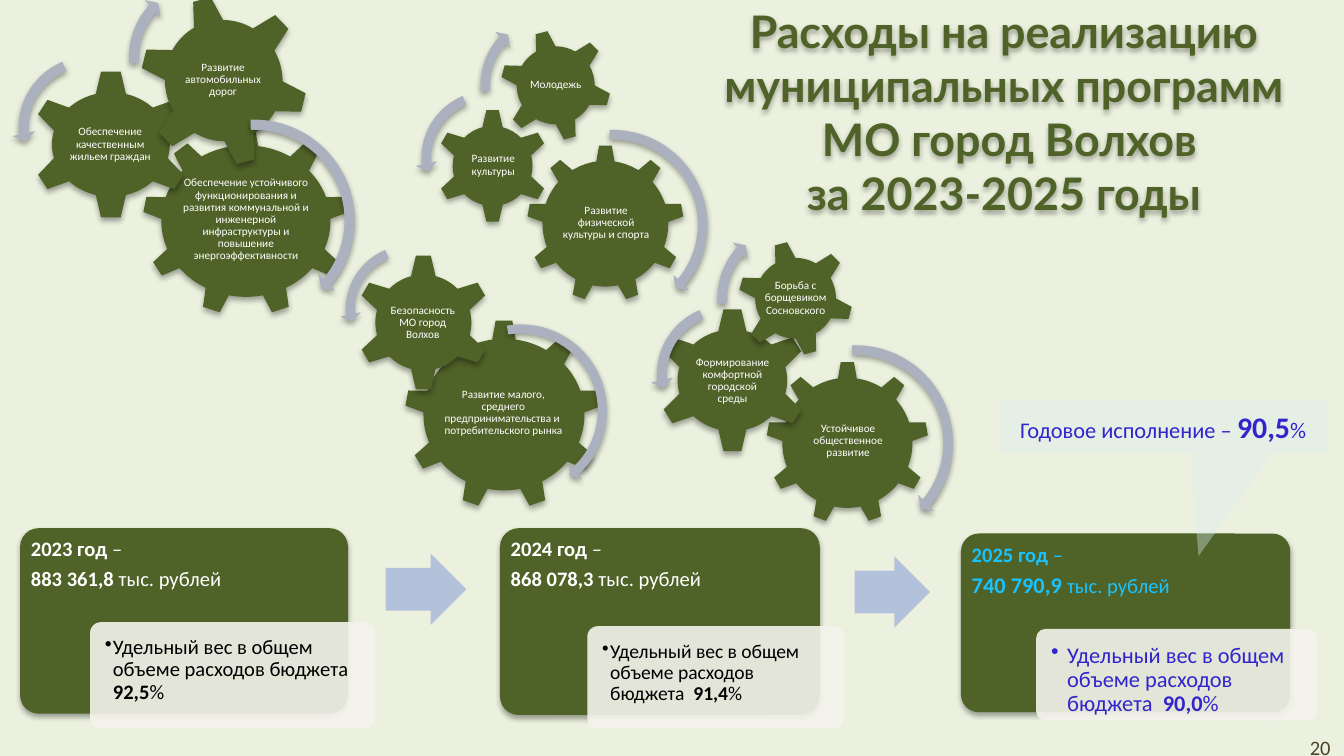
from dataclasses import dataclass
from typing import NamedTuple

from lxml import etree
from pptx import Presentation
from pptx.dml.color import RGBColor
from pptx.enum.shapes import MSO_SHAPE
from pptx.enum.text import MSO_ANCHOR, MSO_AUTO_SIZE, PP_ALIGN
from pptx.oxml.ns import qn
from pptx.util import Inches, Pt

GEAR_6, GEAR_9 = MSO_SHAPE.GEAR_6, MSO_SHAPE.GEAR_9
CLOCKWISE, COUNTER = MSO_SHAPE.CIRCULAR_ARROW, MSO_SHAPE.LEFT_CIRCULAR_ARROW
ROUNDED, RIGHT_ARROW = MSO_SHAPE.ROUNDED_RECTANGLE, MSO_SHAPE.RIGHT_ARROW
CALLOUT = MSO_SHAPE.RECTANGULAR_CALLOUT
LEFT, CENTER, RIGHT = PP_ALIGN.LEFT, PP_ALIGN.CENTER, PP_ALIGN.RIGHT
TOP, MIDDLE = MSO_ANCHOR.TOP, MSO_ANCHOR.MIDDLE

COLORS = {
    "background": "EBF1DE", "green": "4F6228", "arc": "ACB1BF",
    "step": "B3C1DB", "share": "F5F4ED", "callout": "DBEEF4",
    "white": "FFFFFF", "black": "000000", "cyan": "19C3FF",
    "violet": "3125CB", "number": "4A452A",
}
CARD_INSETS = (0.08, 0.08, 0.08, 0.05)
SHARE_INSETS = (0.09, 0.09, 0.09, 0.09)
LABEL_INSETS = (0, 0.01, 0, 0.01)
DEFAULT_INSETS = (0.1, 0.05, 0.1, 0.05)


class Box(NamedTuple):
    left: float
    top: float
    width: float
    height: float


class Words(NamedTuple):
    text: str
    size: float
    bold: bool = False


class Gear(NamedTuple):
    box: Box
    label_box: Box
    label: str


@dataclass
class Cluster:
    gears: list[Gear]  # large, left, upper (tilted)
    arcs: list[Box]    # around the gears, in the same order
    large_arc: tuple[float, ...] = (0.047, 2.99, 24.22, 160.81, 0.055)


@dataclass
class YearCard:
    box: Box
    text_height: float
    year: str
    amount: str
    amount_size: float
    color: str
    share_box: Box
    share: str
    share_size: float
    share_color: str
    indent: float


GEAR_STYLES = [(GEAR_9, 0), (GEAR_6, 0), (GEAR_6, -15)]
LEFT_ARC = (0.065, 4.3, 104.89, 148.38, 0.075)
UPPER_ARC = (0.06, 3.94, 133.14, 105.08, 0.07)

CLUSTERS = [
    Cluster(
        [Gear(Box(5.7, 2.69, 1.21, 1.21), Box(5.95, 2.97, 0.72, 0.62), "Устойчивое общественное развитие"),
         Gear(Box(4.88, 2.29, 1.14, 1.08), Box(5.16, 2.57, 0.58, 0.53), "Формирование комфортной городской среды"),
         Gear(Box(5.49, 1.79, 0.86, 0.86), Box(5.68, 1.98, 0.48, 0.48), "Борьба с борщевиком Сосновского")],
        [Box(5.59, 2.52, 1.55, 1.55), Box(4.84, 2.22, 1.13, 1.13), Box(5.29, 1.61, 1.21, 1.21)]),
    Cluster(
        [Gear(Box(1.06, 0.94, 1.54, 1.41), Box(1.36, 1.27, 0.94, 0.73),
              "Обеспечение устойчивого функционирования и развития коммунальной "
              "и инженерной инфраструктуры и повышение энергоэффективности"),
         Gear(Box(0.22, 0.52, 1.21, 1.11), Box(0.51, 0.8, 0.62, 0.55), "Обеспечение качественным жильем граждан"),
         Gear(Box(1.04, -0.04, 1.25, 1.28), Box(1.31, 0.24, 0.7, 0.71), "Развитие автомобильных дорог")],
        [Box(1.09, 0.84, 1.6, 1.6), Box(0.09, 0.37, 1.16, 1.16), Box(0.91, -0.2, 1.25, 1.25)]),
    Cluster(
        [Gear(Box(3.01, 2.38, 1.48, 1.41), Box(3.3, 2.71, 0.89, 0.72),
              "Развитие малого, среднего предпринимательства и  потребительского рынка"),
         Gear(Box(2.64, 1.89, 1.02, 1.02), Box(2.89, 2.15, 0.51, 0.5), "Безопасность МО город Волхов")],
        [Box(3.19, 2.37, 1.37, 1.37), Box(2.53, 1.78, 1.04, 1.04)],
        (0.049, 3.13, 28.71, 156.4, 0.057)),
    Cluster(
        [Gear(Box(3.92, 1.08, 1.17, 1.17), Box(4.16, 1.36, 0.7, 0.6), "Развитие физической культуры и спорта"),
         Gear(Box(3.24, 0.81, 0.85, 0.85), Box(3.46, 1.02, 0.42, 0.42), "Развитие культуры"),
         Gear(Box(3.72, 0.22, 0.83, 0.83), Box(3.9, 0.4, 0.47, 0.47), "Молодежь")],
        [Box(3.81, 0.92, 1.5, 1.5), Box(3.09, 0.63, 1.09, 1.09), Box(3.53, 0.05, 1.17, 1.17)]),
]
CARDS = [
    YearCard(Box(0.15, 3.93, 2.44, 1.38), 0.92, "2023", "883 361,8", 11, "white",
             Box(0.67, 4.63, 2.12, 0.79), "92,5", 11, "black", 0.06),
    YearCard(Box(3.72, 3.93, 2.38, 1.39), 0.93, "2024", "868 078,3", 11, "white",
             Box(4.37, 4.66, 1.91, 0.76), "91,4", 10.5, "black", 0.06),
    YearCard(Box(7.15, 3.97, 2.45, 1.33), 0.88, "2025", "740 790,9", 12, "cyan",
             Box(7.71, 4.68, 2.09, 0.68), "90,0", 12, "violet", 0.12),
]
STEP_ARROWS = [Box(2.87, 4.12, 0.6, 0.53), Box(6.36, 4.14, 0.56, 0.53)]


def lengths(box: Box) -> list[int]:
    return [Inches(value) for value in box]


def add_shadow(shape) -> None:
    shape.shadow.inherit = False
    effects = shape._element.spPr.find(qn("a:effectLst"))
    outer = etree.SubElement(effects, qn("a:outerShdw"), blurRad=str(Pt(3.1)),
                             dist=str(Pt(1.8)), dir="5400000", rotWithShape="0")
    black = etree.SubElement(outer, qn("a:srgbClr"), val=COLORS["black"])
    etree.SubElement(black, qn("a:alpha"), val="35000")


def add_figure(shapes, kind, box: Box, color: str, adjustments=(), opacity: int = 100, shadow: bool = False):
    figure = shapes.add_shape(kind, *lengths(box))
    for index, value in enumerate(adjustments):
        figure.adjustments[index] = value
    figure.fill.solid()
    figure.fill.fore_color.rgb = RGBColor.from_string(COLORS[color])
    figure.line.fill.background()
    figure.shadow.inherit = False
    if opacity < 100:
        tint = figure._element.spPr.find(".//" + qn("a:srgbClr"))
        etree.SubElement(tint, qn("a:alpha"), val=str(opacity * 1000))
    if shadow:
        add_shadow(figure)
    return figure


def write(shape, paragraphs: list[list[Words]], color: str, font: str = "Calibri", align=LEFT, anchor=TOP,
          insets=DEFAULT_INSETS, spacing: float = 1, after: float = 0, indent: float = 0) -> None:
    frame = shape.text_frame
    frame.word_wrap = True
    frame.auto_size = MSO_AUTO_SIZE.NONE
    frame.vertical_anchor = anchor
    (frame.margin_left, frame.margin_top,
     frame.margin_right, frame.margin_bottom) = [Inches(value) for value in insets]
    for index, parts in enumerate(paragraphs):
        paragraph = frame.paragraphs[0] if index == 0 else frame.add_paragraph()
        if indent:
            properties = paragraph._p.get_or_add_pPr()
            properties.set("marL", str(Inches(indent)))
            properties.set("indent", str(-Inches(indent)))
            etree.SubElement(properties, qn("a:buChar"), char="•")
            paragraph.level = 1
        paragraph.alignment = align
        paragraph.line_spacing = spacing
        paragraph.space_after = Pt(after)
        for words in parts:
            run = paragraph.add_run()
            run.text = words.text
            run.font.name = font
            run.font.size = Pt(words.size)
            run.font.bold = words.bold
            run.font.color.rgb = RGBColor.from_string(COLORS[color])


def draw_cluster(slide, cluster: Cluster) -> None:
    shapes = slide.shapes.add_group_shape().shapes
    for gear, (kind, tilt) in zip(cluster.gears, GEAR_STYLES):
        add_figure(shapes, kind, gear.box, "green", shadow=True).rotation = tilt
        write(shapes.add_textbox(*lengths(gear.label_box)), [[Words(gear.label, 6)]], "white",
              align=CENTER, anchor=MIDDLE, insets=LABEL_INSETS, spacing=0.9, after=2)
    arc_styles = [(CLOCKWISE, cluster.large_arc), (COUNTER, LEFT_ARC), (CLOCKWISE, UPPER_ARC)]
    for box, (kind, adjustments) in zip(cluster.arcs, arc_styles):
        add_figure(shapes, kind, box, "arc", adjustments, shadow=True)


def draw_card(shapes, card: YearCard) -> None:
    add_figure(shapes, ROUNDED, card.box, "green", [0.1], shadow=True)
    heading = card.box._replace(height=card.text_height)
    write(shapes.add_textbox(*lengths(heading)),
          [[Words(f"{card.year} год ", 11, True), Words("–", 11)],
           [Words(f"{card.amount} ", card.amount_size, True), Words("тыс. рублей", 11)]],
          card.color, insets=CARD_INSETS, spacing=0.9, after=4)
    add_figure(shapes, ROUNDED, card.share_box, "share", [0.1], opacity=90)
    left, top, width, height = card.share_box
    size = card.share_size
    write(shapes.add_textbox(*lengths(Box(left + 0.02, top + 0.02, width - 0.04, height - 0.05))),
          [[Words("Удельный вес в общем объеме расходов бюджета  ", size),
            Words(card.share, size, True), Words("%", size)]],
          card.share_color, insets=SHARE_INSETS, spacing=0.9, after=2, indent=card.indent)


def main() -> None:
    presentation = Presentation()
    presentation.slide_width = Inches(10)
    presentation.slide_height = Inches(10 * 9 / 16)
    slide = presentation.slides.add_slide(presentation.slide_layouts[5])
    slide.background.fill.solid()
    slide.background.fill.fore_color.rgb = RGBColor.from_string(COLORS["background"])

    # Title
    title = slide.shapes.title
    title.left, title.top, title.width, title.height = lengths(Box(4.28, -0.02, 6.46, 1.03))
    title_lines = ["Расходы на реализацию ", "муниципальных программ ", " МО город Волхов ", "за 2023-2025 годы "]
    write(title, [[Words(line, 24, True)] for line in title_lines], "green", font="Lato", align=CENTER)
    add_shadow(title)

    # Programme gears
    for cluster in CLUSTERS:
        draw_cluster(slide, cluster)

    # Yearly spending
    yearly = slide.shapes.add_group_shape().shapes
    for card in CARDS:
        draw_card(yearly, card)
    for box in STEP_ARROWS:
        add_figure(yearly, RIGHT_ARROW, box, "step", [0.6, 0.5])

    # Execution callout and slide number
    execution = add_figure(slide.shapes, CALLOUT, Box(7.44, 2.98, 2.43, 0.39), "callout", [0.108, 2.47], opacity=37)
    write(execution, [[Words("Годовое исполнение – ", 12), Words("90,5", 16, True), Words("%", 12)]],
          "violet", align=CENTER, anchor=MIDDLE)
    write(slide.shapes.add_textbox(*lengths(Box(7.67, 5.41, 2.33, 0.3))), [[Words("20", 11)]],
          "number", align=RIGHT, anchor=MIDDLE)
    presentation.save("out.pptx")


if __name__ == "__main__":
    main()
